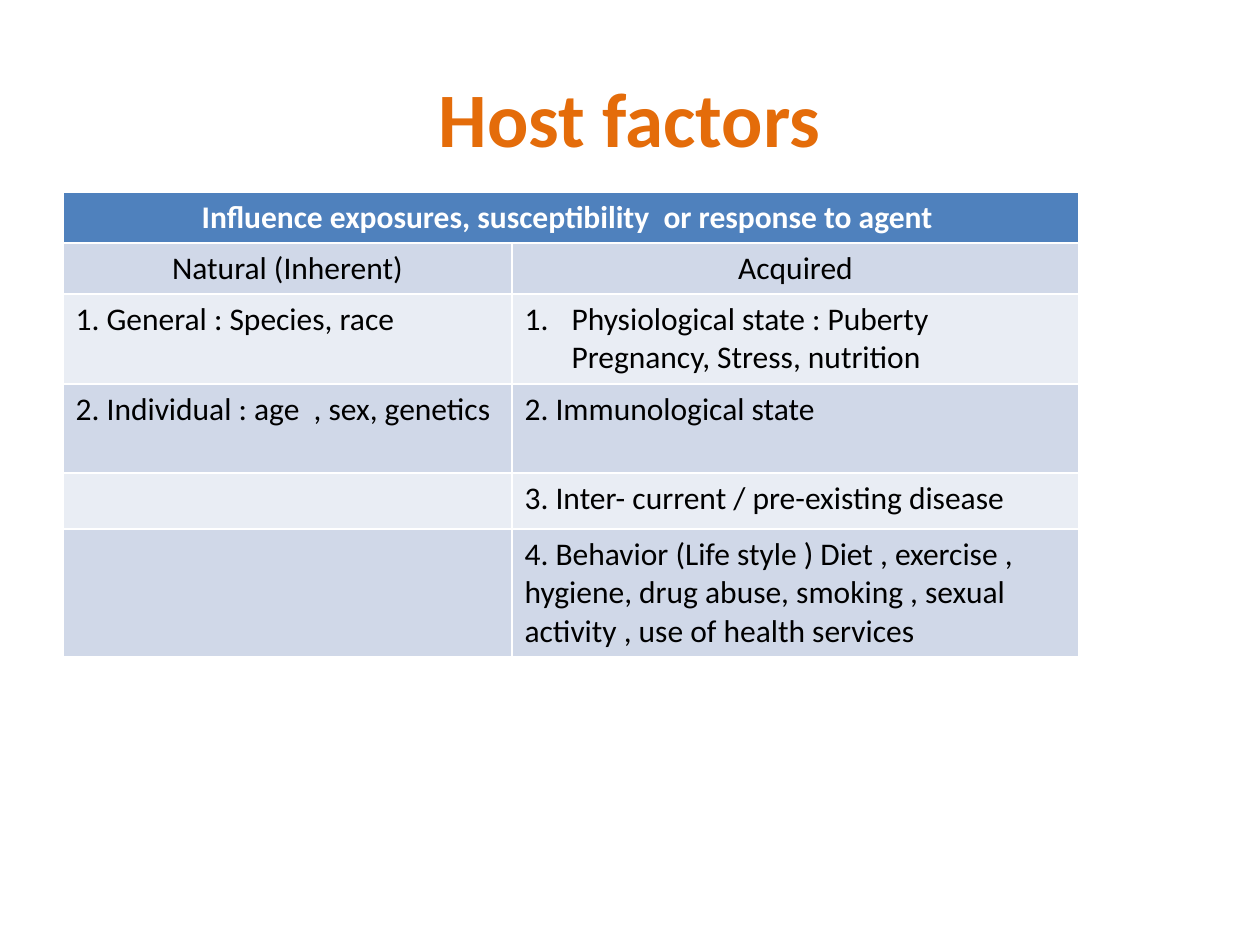
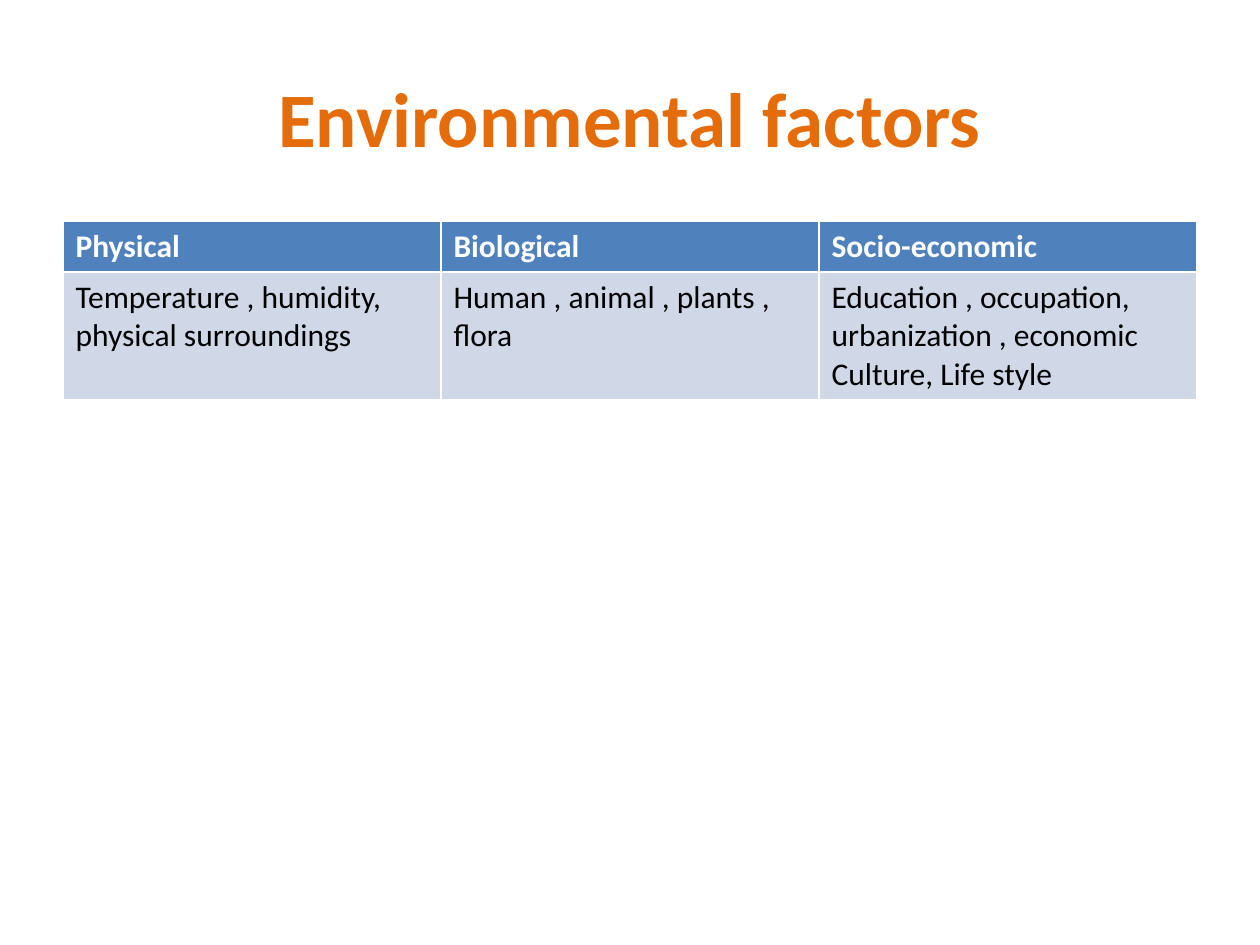
import pptx
import pptx.util
import pptx.dml.color
import pptx.enum.text
import pptx.oxml.ns
import lxml.etree

PX = 914400 / 126
FONT = "Calibri"
ORANGE, BLUE, WHITE, BLACK = "E46C0A", "4F81BD", "FFFFFF", "000000"
BANDS = ["D0D8E8", "E9EDF4"]
LEFT = 63
CENTER = pptx.enum.text.PP_ALIGN.CENTER


def px(n):
    return pptx.util.Emu(round(n * PX))


def style(font, size, color, bold):
    font.name, font.size, font.bold = FONT, pptx.util.Pt(size), bold
    font.color.rgb = pptx.dml.color.RGBColor.from_string(color)


# Content: title, table top, column widths, row heights, rows
slides = [
    ("Host factors", 192, [449, 567], [51, 51, 90, 89, 56, 128], [
        ["Influence exposures, susceptibility  or response to agent ", ""],
        ["Natural (Inherent)", "Acquired"],
        ["1. General : Species, race",
         "Physiological state : Puberty Pregnancy, Stress, nutrition"],
        ["2. Individual : age  , sex, genetics", "2. Immunological state"],
        ["", "3. Inter- current / pre-existing disease"],
        ["", "4. Behavior (Life style ) Diet , exercise , hygiene, drug abuse, "
             "smoking , sexual activity , use of health services"],
    ]),
    ("Environmental factors", 221, [378] * 3, [51, 128], [
        ["Physical", "Biological", "Socio-economic"],
        ["Temperature , humidity, physical surroundings",
         "Human , animal , plants , flora",
         "Education , occupation, urbanization , economic Culture, Life style"],
    ]),
]

prs = pptx.Presentation()
prs.slide_width, prs.slide_height = px(1260), px(945)
tables = []

for title, top, widths, heights, rows in slides:
    s = prs.slides.add_slide(prs.slide_layouts[5])

    # Title
    sp = s.shapes.title
    sp.left, sp.top, sp.width, sp.height = px(LEFT), px(38), px(1134), px(158)
    tf = sp.text_frame
    tf.vertical_anchor = pptx.enum.text.MSO_ANCHOR.MIDDLE
    p = tf.paragraphs[0]
    p.alignment = CENTER
    r = p.add_run()
    r.text = title
    style(r.font, 44, ORANGE, True)

    # Table: the default style supplies the white borders
    table = s.shapes.add_table(len(rows), len(widths), px(LEFT), px(top),
                               px(sum(widths)), px(sum(heights))).table
    tables.append(table)
    for column, width in zip(table.columns, widths):
        column.width = px(width)
    for i, (height, row) in enumerate(zip(heights, rows)):
        table.rows[i].height = px(height)
        for j, text in enumerate(row):
            cell = table.cell(i, j)
            cell.fill.solid()
            fill = BANDS[(i - 1) % 2] if i else BLUE
            cell.fill.fore_color.rgb = pptx.dml.color.RGBColor.from_string(fill)
            if text:
                r = cell.text_frame.paragraphs[0].add_run()
                r.text = text
                style(r.font, 18, BLACK if i else WHITE, i == 0)

# Host table: merged heading, centred subheadings, one numbered item
host = tables[0]
host.cell(0, 0).merge(host.cell(0, 1))
for i, j in [(0, 0), (1, 0), (1, 1)]:
    host.cell(i, j).text_frame.paragraphs[0].alignment = CENTER
pPr = host.cell(2, 1).text_frame.paragraphs[0]._p.get_or_add_pPr()
pPr.set("marL", str(px(47)))
pPr.set("indent", str(px(-47)))
lxml.etree.SubElement(pPr, pptx.oxml.ns.qn("a:buFont"), typeface="+mj-lt")
lxml.etree.SubElement(pPr, pptx.oxml.ns.qn("a:buAutoNum"), type="arabicPeriod")

prs.save("out.pptx")
